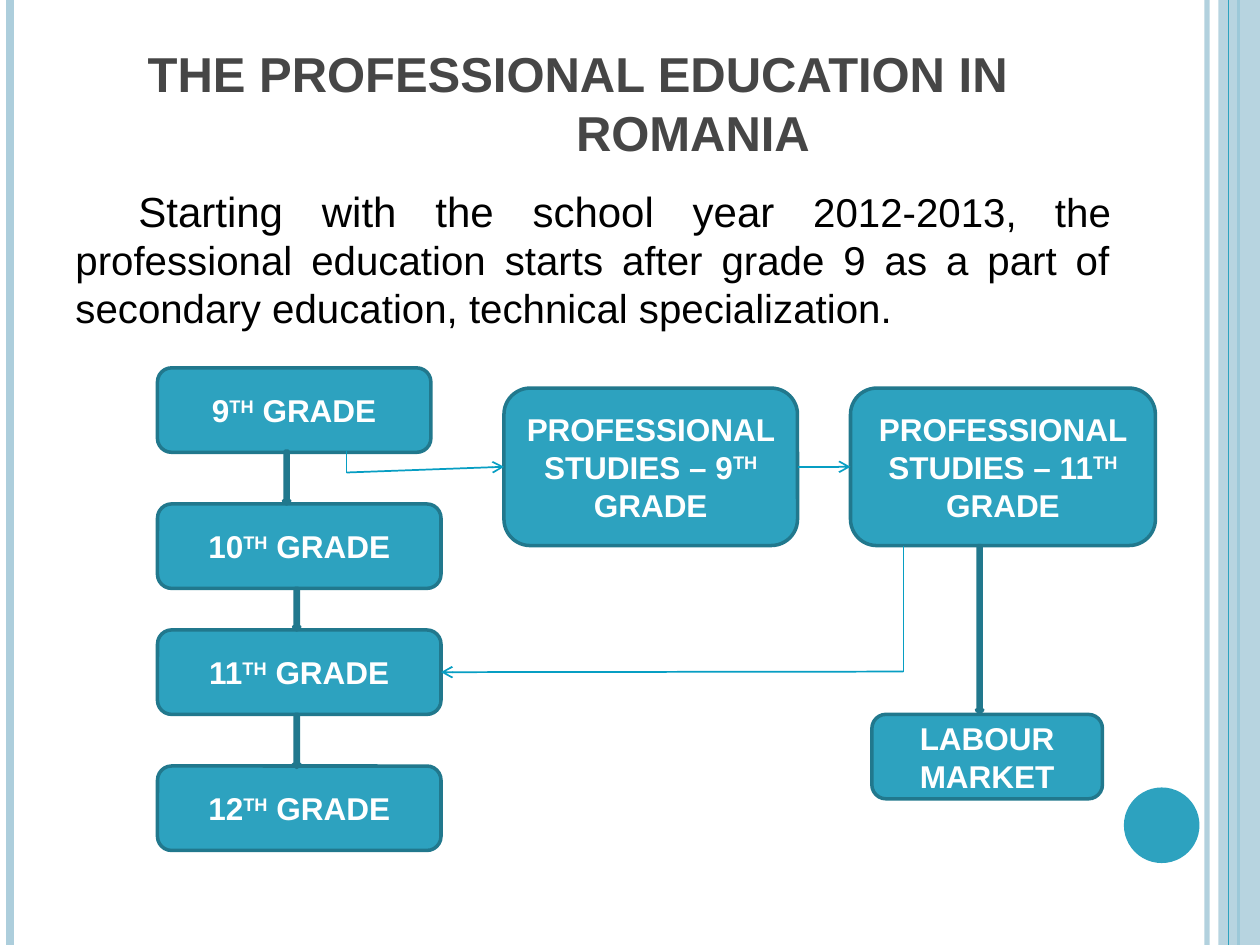
import pptx
import pptx.util
import pptx.oxml.ns
import pptx.oxml.xmlchemy
import pptx.dml.color
import pptx.enum.shapes
import pptx.enum.text

Inches = pptx.util.Inches
Pt = pptx.util.Pt
RGB = pptx.dml.color.RGBColor.from_string
Shape = pptx.enum.shapes.MSO_SHAPE
Align = pptx.enum.text.PP_ALIGN
Anchor = pptx.enum.text.MSO_ANCHOR
qn = pptx.oxml.ns.qn
Elem = pptx.oxml.xmlchemy.OxmlElement

hues = {"teal": "2DA2BF", "edge": "21788D", "pale": "ADCEDC", "wire": "079EC3",
        "title": "464646", "black": "000000", "white": "FFFFFF"}

prs = pptx.Presentation()
prs.slide_width, prs.slide_height = Inches(10), Inches(7.5)
slide = prs.slides.add_slide(prs.slide_layouts[6])
shapes = slide.shapes


def write(shape, runs, size=18, hue="white", bold=True, align=Align.CENTER,
          anchor=Anchor.MIDDLE):
    """Fill a shape with one paragraph; each run is (text, own size, raised)."""
    frame = shape.text_frame
    frame.word_wrap = True
    frame.vertical_anchor = anchor
    para = frame.paragraphs[0]
    para.alignment = align
    for text, own, raised in runs:
        run = para.add_run()
        run.text = text
        run.font.name = "Arial"
        run.font.size = Pt(own or size)
        run.font.bold = bold
        run.font.color.rgb = RGB(hues[hue])
        if raised:
            run.font._element.set("baseline", "30000")
    return para


def link(start, end, hue="wire", width=1, arrow=False):
    """Draw a straight line between two points."""
    line = shapes.add_connector(pptx.enum.shapes.MSO_CONNECTOR.STRAIGHT,
                                *[Inches(v) for v in start + end])
    line.line.color.rgb = RGB(hues[hue])
    line.line.width = Pt(width)
    if arrow:
        tail = Elem("a:tailEnd")
        tail.set("type", "arrow")
        line.line._get_or_add_ln().append(tail)
    line._element.spPr.append(Elem("a:effectLst"))
    return line


# Side bands
rails = [link((x, 0), (x, 7.5), hue, width)
         for x, hue, width in [(9.58, "pale", 3), (0.08, "pale", 4.5), (9.83, "teal", 1.5)]]
band = shapes.add_shape(Shape.RECTANGLE, Inches(9.67), 0, Inches(0.33), Inches(7.5))
link((9.75, 0), (9.75, 7.5), "teal", 0.75)
disc = shapes.add_shape(Shape.OVAL, Inches(8.92), Inches(6.25), Inches(0.6), Inches(0.6))
for item, hue in [(band, "pale"), (disc, "teal")]:
    item.shadow.inherit = False
    item.fill.solid()
    item.fill.fore_color.rgb = RGB(hues[hue])
    item.line.fill.background()
for item, share in [(rails[0], "93000"), (band, "87000")]:
    alpha = Elem("a:alpha")
    alpha.set("val", share)
    next(item._element.spPr.iter(qn("a:srgbClr"))).append(alpha)

# Title with a hanging second line, then the body
title = shapes.add_textbox(Inches(0.5), Inches(0.25), Inches(8.17), Inches(1.08))
para = write(title, [("THE PROFESSIONAL EDUCATION IN ROMANIA", None, False)],
             size=28, hue="title", anchor=Anchor.BOTTOM)
props = para._p.get_or_add_pPr()
props.set("marL", str(Inches(1.83)))
props.set("indent", str(-Inches(1.83)))

body = shapes.add_textbox(Inches(0.5), Inches(1.42), Inches(8.42), Inches(1.4))
para = write(body, [("\tStarting with the school year ", 24, False),
                    ("2012-2013, the professional education starts after grade 9 as a "
                     "part of secondary education, technical specialization.", 23, False)],
             hue="black", bold=False, align=Align.JUSTIFY, anchor=Anchor.TOP)
para.space_before = Pt(6)

# Boxes: name, text before the raised TH, left, top, width, height
nodes = [("g9", "9", 1.25, 2.92, 2.17, 0.67),
         ("g10", "10", 1.25, 4, 2.25, 0.67),
         ("g11", "11", 1.25, 5, 2.25, 0.67),
         ("pro11", "PROFESSIONAL STUDIES – 11", 6.75, 3.08, 2.42, 1.25),
         ("pro9", "PROFESSIONAL STUDIES – 9", 4, 3.08, 2.33, 1.25),
         ("work", "LABOUR MARKET", 6.92, 5.67, 1.83, 0.67),
         ("g12", "12", 1.25, 6.08, 2.25, 0.67)]
bars = [(2.25, 3.58, 0.42), (2.33, 4.67, 0.33), (2.33, 5.67, 0.42), (7.75, 4.33, 1.33)]
parts = [(Shape.ROUNDED_RECTANGLE, name, text, at) for name, text, *at in nodes]
parts += [(Shape.DOWN_ARROW, None, "", (x, y, 0.05, tall)) for x, y, tall in bars]
boxes = {}
for kind, name, text, at in parts:
    box = shapes.add_shape(kind, *[Inches(v) for v in at])
    box.shadow.inherit = False
    box.fill.solid()
    box.fill.fore_color.rgb = RGB(hues["teal"])
    box.line.color.rgb = RGB(hues["edge"])
    box.line.width = Pt(2)
    if name:
        boxes[name] = box
        runs = [(text, None, False)]
        if name != "work":
            runs += [("TH", None, True), (" GRADE", None, False)]
        write(box, runs)

# Thin links
step = link((6.33, 3.71), (6.75, 3.71), arrow=True)
step.begin_connect(boxes["pro9"], 3)
step.end_connect(boxes["pro11"], 1)
link((7.17, 4.33), (7.17, 5.33))
back = link((7.17, 5.33), (3.5, 5.33), arrow=True)
back.end_connect(boxes["g11"], 3)
link((2.75, 3.58), (2.75, 3.75))
fork = link((2.75, 3.75), (4, 3.71), arrow=True)
fork.end_connect(boxes["pro9"], 1)

prs.save("out.pptx")
